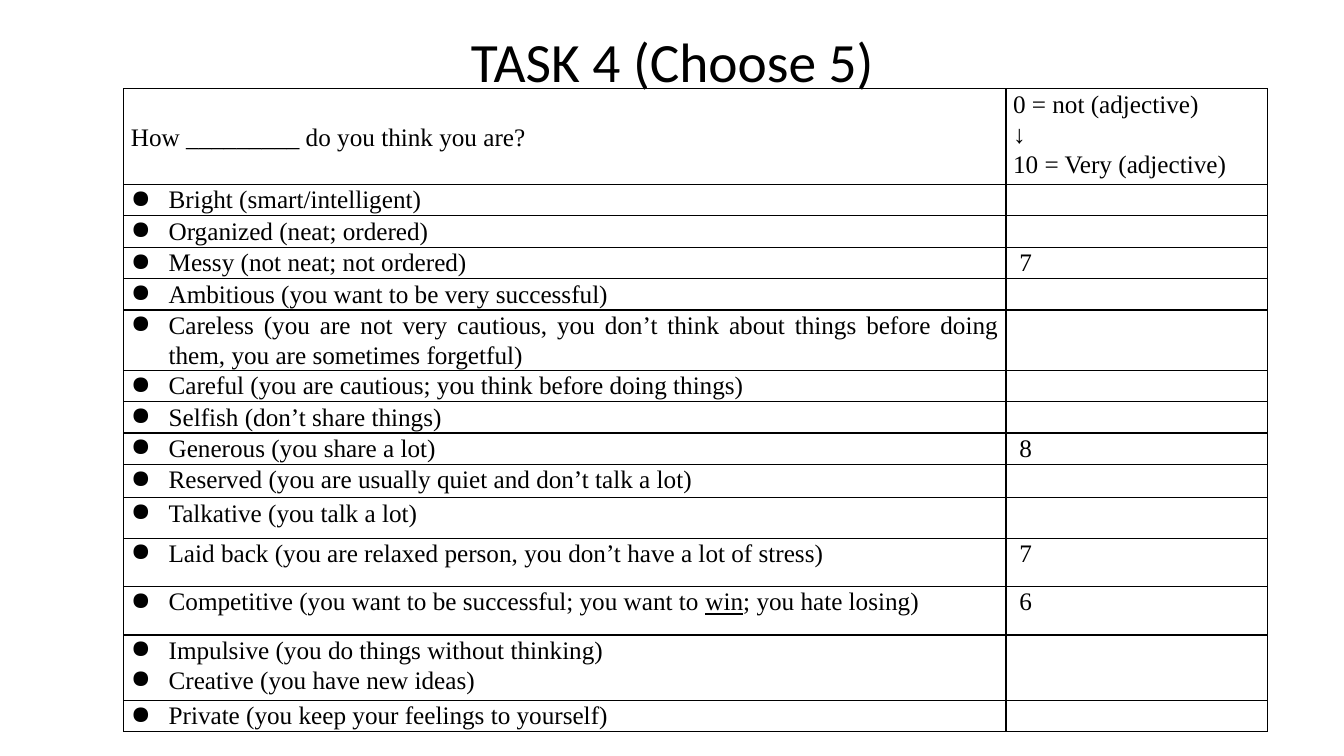
from dataclasses import dataclass

from lxml.etree import SubElement
from pptx import Presentation
from pptx.dml.color import RGBColor
from pptx.enum.text import MSO_ANCHOR as Anchor, MSO_AUTO_SIZE as AutoSize, PP_ALIGN as Align
from pptx.oxml.ns import qn
from pptx.table import _Cell as Cell
from pptx.text.text import _Paragraph as Paragraph
from pptx.util import Cm, Pt

COLOURS = {"text": "000000", "border": "000000"}
TITLE_FONT = {"name": "Calibri", "size": Pt(39.6)}
TABLE_FONT = {"name": "Times New Roman", "size": Pt(18)}
TITLE_BOX = {"left": Cm(2.34), "top": Cm(1.02), "width": Cm(29.21), "height": Cm(1.22)}
TITLE_FRAME = {"word_wrap": True, "auto_size": AutoSize.NONE, "vertical_anchor": Anchor.MIDDLE}
TABLE_TEXT = {"alignment": Align.JUSTIFY, "line_spacing": 1.07}
CELL_MARGINS = {"margin_left": Cm(0.18), "margin_right": Cm(0.18),
                "margin_top": 0, "margin_bottom": 0}
COLUMN_WIDTHS = (22.23, 6.6)
HEADER_HEIGHT = 2.41
HANGING_INDENT = Cm(0.95)


@dataclass
class Trait:
    """One table row; underscores around a word underline it."""
    lines: tuple[str, ...]
    score: str = ""
    height: float = 0.79


QUESTION = "How _________ do you think you are?"
SCALE = ("0 = not (adjective)", "↓", "10 = Very (adjective)")
TRAITS = (
    Trait(("Bright (smart/intelligent)",)),
    Trait(("Organized (neat; ordered)",)),
    Trait(("Messy (not neat; not ordered)",), "7"),
    Trait(("Ambitious (you want to be very successful)",)),
    Trait(("Careless (you are not very cautious, you don’t think about things "
           "before doing them, you are sometimes forgetful)",), height=1.52),
    Trait(("Careful (you are cautious; you think before doing things)",)),
    Trait(("Selfish (don’t share things)",)),
    Trait(("Generous (you share a lot)",), "8"),
    Trait(("Reserved (you are usually quiet and don’t talk a lot)",), height=0.84),
    Trait(("Talkative (you talk a lot)",), height=1.02),
    Trait(("Laid back (you are relaxed person, you don’t have a lot of stress)",), "7", 1.22),
    Trait(("Competitive (you want to be successful; you want to _win_; you hate losing)",),
          "6", 1.22),
    Trait(("Impulsive (you do things without thinking)", "Creative (you have new ideas)"),
          height=1.65),
    Trait(("Private (you keep your feelings to yourself)",)),
)


def apply(target: object, values: dict) -> None:
    for attribute, value in values.items():
        setattr(target, attribute, value)


def add_words(paragraph: Paragraph, words: str, font: dict, **extra: bool) -> None:
    run = paragraph.add_run()
    run.text = words
    apply(run.font, font | extra)
    run.font.color.rgb = RGBColor.from_string(COLOURS["text"])


def add_bullet(paragraph: Paragraph) -> None:
    properties = paragraph._p.get_or_add_pPr()
    properties.set("marL", str(HANGING_INDENT))
    properties.set("indent", str(-HANGING_INDENT))
    SubElement(properties, qn("a:buChar"), char="●")


def next_line(cell: Cell, index: int) -> Paragraph:
    frame = cell.text_frame
    paragraph = frame.add_paragraph() if index else frame.paragraphs[0]
    apply(paragraph, TABLE_TEXT)
    return paragraph


def format_cell(cell: Cell) -> None:
    apply(cell, CELL_MARGINS)
    properties = cell._tc.get_or_add_tcPr()
    for side in ("lnL", "lnR", "lnT", "lnB"):
        border = SubElement(properties, qn(f"a:{side}"), w=str(Pt(1)))
        colour = SubElement(border, qn("a:solidFill"))
        SubElement(colour, qn("a:srgbClr"), val=COLOURS["border"])
    cell.fill.background()


deck = Presentation()
deck.slide_width, deck.slide_height = Cm(33.87), Cm(19.05)
slide = deck.slides.add_slide(deck.slide_layouts[5])

# Title
task = slide.shapes.title
apply(task, TITLE_BOX)
apply(task.text_frame, TITLE_FRAME)
heading = task.text_frame.paragraphs[0]
apply(heading, {"alignment": Align.CENTER, "line_spacing": 0.9})
add_words(heading, "TASK 4 (Choose 5)", TITLE_FONT)

# Table grid
heights = [HEADER_HEIGHT, *(trait.height for trait in TRAITS)]
survey = slide.shapes.add_table(len(heights), len(COLUMN_WIDTHS), Cm(3.12), Cm(2.24),
                                Cm(sum(COLUMN_WIDTHS)), Cm(sum(heights))).table
apply(survey, {"first_row": False, "horz_banding": False})
for column, width in zip(survey.columns, COLUMN_WIDTHS):
    column.width = Cm(width)
for row, height in zip(survey.rows, heights):
    row.height = Cm(height)
for cell in survey.iter_cells():
    format_cell(cell)

# Header row
question = survey.cell(0, 0)
question.vertical_anchor = Anchor.MIDDLE
add_words(next_line(question, 0), QUESTION, TABLE_FONT)
for index, step in enumerate(SCALE):
    add_words(next_line(survey.cell(0, 1), index), step, TABLE_FONT, bold=step == "↓")

# Traits and scores
for number, trait in enumerate(TRAITS, start=1):
    for index, line in enumerate(trait.lines):
        description = next_line(survey.cell(number, 0), index)
        add_bullet(description)
        for part, words in enumerate(line.split("_")):
            add_words(description, words, TABLE_FONT, underline=part % 2 == 1)
    if trait.score:
        add_words(next_line(survey.cell(number, 1), 0), f" {trait.score}", TABLE_FONT)

deck.save("out.pptx")
